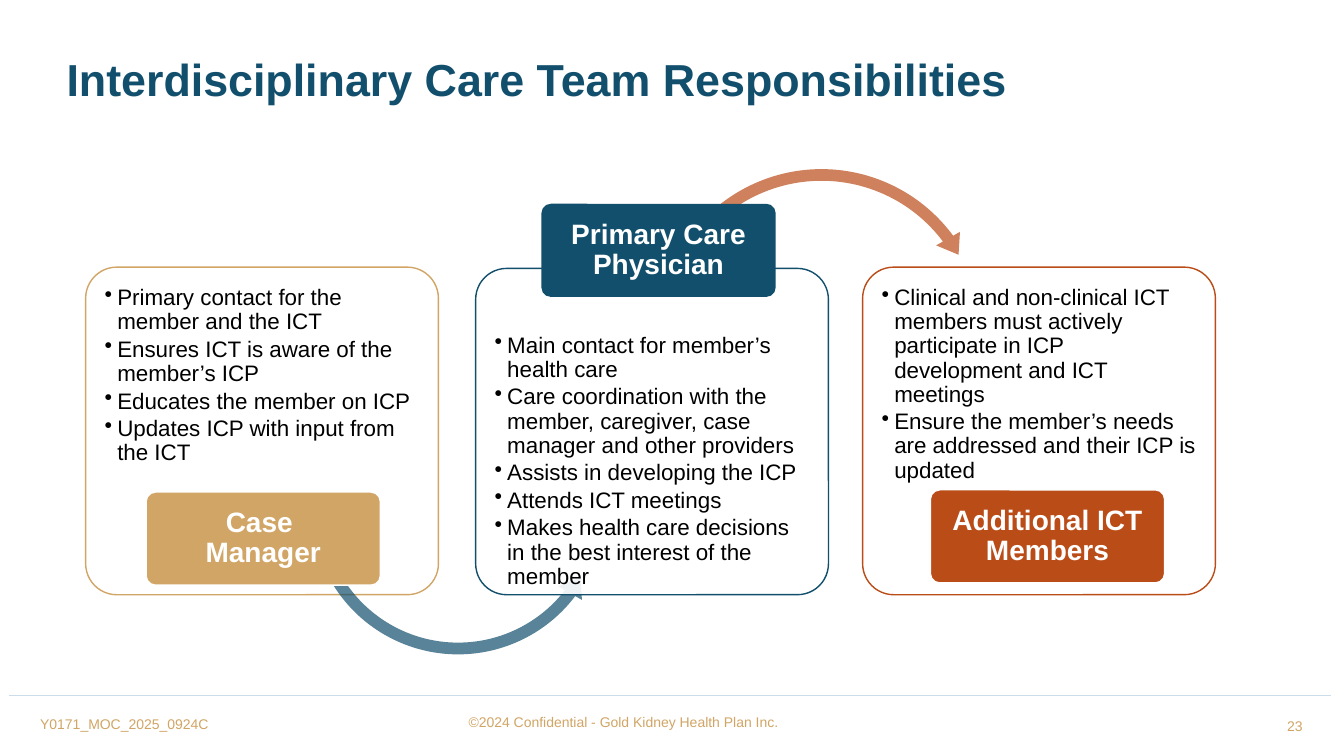
import pptx
import pptx.util
import pptx.dml.color
import pptx.enum.shapes
import pptx.enum.text
import pptx.oxml.ns
import lxml.etree

Pt = pptx.util.Pt
SHAPE = pptx.enum.shapes.MSO_SHAPE
ALIGN = pptx.enum.text.PP_ALIGN
ANCHOR = pptx.enum.text.MSO_ANCHOR
qn = pptx.oxml.ns.qn

HUES = {"gold": "D1A565", "blue": "124F6D", "rust": "BA4C17",
        "white": "FFFFFF", "black": "000000", "rule": "CCDDEA"}
TITLE = "Interdisciplinary Care Team Responsibilities"
CARD_W, CARD_END = 252, 424.8
BADGE_W, BADGE_H = 167.3, 66.5
TEAM = [
    {"hue": "gold", "card": (61.2, 190.8), "badge": (104.4, 351.5), "edge": True,
     "role": "Case \vManager", "top": 7.2,
     "tasks": ["Primary contact for the \vmember and the ICT",
               "Ensures ICT is aware of the\vmember’s ICP",
               "Educates the member on ICP",
               "Updates ICP with input from the ICT"],
     "arrow": (SHAPE.LEFT_CIRCULAR_ARROW, "blue", (216.7, 252, 221),
               (0.038, 4.7, 22.45, 90.25, 0.044))},
    {"hue": "blue", "card": (339.8, 191.7), "badge": (386.8, 145.6), "edge": False,
     "role": "Primary Care Physician", "top": 40.3,
     "tasks": ["Main contact for member’s \vhealth care",
               "Care coordination with the member, caregiver, case manager and other providers",
               "Assists in developing the ICP",
               "Attends ICT meetings",
               "Makes health care decisions in the best interest of the member"],
     "arrow": (SHAPE.CIRCULAR_ARROW, "rust", (464.4, 115.2, 244.8),
               (0.034, 4.2, 194.05, 125.75, 0.04))},
    {"hue": "rust", "card": (616.2, 190.8), "badge": (664.6, 349.9), "edge": True,
     "role": "Additional ICT Members", "top": 7.2,
     "tasks": ["Clinical and non-clinical ICT members must actively participate in ICP development and ICT meetings",
               "Ensure the member’s needs are addressed and their ICP is updated"],
     "arrow": None},
]
FOOT = [
    ("23", (755.3, 504.7, 182.2, 27.4), ALIGN.RIGHT, ANCHOR.MIDDLE, True),
    ("©2024 Confidential - Gold Kidney Health Plan Inc.",
     (327.6, 506.2, 300.2, 19.4), ALIGN.LEFT, ANCHOR.MIDDLE, True),
    ("Y0171_MOC_2025_0924C", (21.6, 507.6, 135.4, 19.4), ALIGN.LEFT, ANCHOR.TOP, False),
]


def tint(name):
    return pptx.dml.color.RGBColor.from_string(HUES[name])


def style(para, size, hue, bold=False):
    para.font.name = "Arial"
    para.font.size = Pt(size)
    para.font.bold = bold
    para.font.color.rgb = tint(hue)


def draw(slide, kind, box, fill, edge=None, alpha=None):
    shape = slide.shapes.add_shape(kind, *map(Pt, box))
    shape.shadow.inherit = False
    shape.fill.solid()
    shape.fill.fore_color.rgb = tint(fill)
    if alpha:
        clr = shape._element.spPr.find(qn("a:solidFill"))[0]
        lxml.etree.SubElement(clr, qn("a:alpha")).set("val", str(alpha * 1000))
    if edge:
        shape.line.color.rgb = tint(edge)
        shape.line.width = Pt(1)
    else:
        shape.line.fill.background()
    return shape


def inset(frame, left, top):
    frame.word_wrap = True
    frame.margin_left = frame.margin_right = Pt(left)
    frame.margin_top = Pt(top)
    frame.margin_bottom = Pt(2)


def add_card(slide, part):
    left, top = part["card"]
    card = draw(slide, SHAPE.ROUNDED_RECTANGLE, (left, top, CARD_W, CARD_END - top),
                "white", part["hue"], 90)
    card.adjustments[0] = 0.095
    frame = card.text_frame
    inset(frame, 7.2, part["top"])
    frame.vertical_anchor = ANCHOR.TOP
    for i, task in enumerate(part["tasks"]):
        para = frame.add_paragraph() if i else frame.paragraphs[0]
        para.text = task
        props = para._p.get_or_add_pPr()
        props.set("marL", str(Pt(9)))
        props.set("indent", str(Pt(-9)))
        lxml.etree.SubElement(props, qn("a:buChar")).set("char", "•")
        para.alignment = ALIGN.LEFT
        para.line_spacing = 0.9
        para.space_after = Pt(2.4)
        style(para, 16, "black")


def add_arrow(slide, kind, hue, place, bends):
    left, top, size = place
    arrow = draw(slide, kind, (left, top, size, size), hue, alpha=70)
    for i, bend in enumerate(bends):
        arrow.adjustments[i] = bend


def add_badge(slide, part):
    badge = draw(slide, SHAPE.ROUNDED_RECTANGLE, (*part["badge"], BADGE_W, BADGE_H),
                 part["hue"], "white" if part["edge"] else None)
    badge.adjustments[0] = 0.1
    frame = badge.text_frame
    inset(frame, 4, 2)
    frame.vertical_anchor = ANCHOR.MIDDLE
    para = frame.paragraphs[0]
    para.text = part["role"]
    para.alignment = ALIGN.CENTER
    para.line_spacing = 0.9
    style(para, 20, "white", True)


def add_foot(slide):
    rule = slide.shapes.add_connector(pptx.enum.shapes.MSO_CONNECTOR.STRAIGHT,
                                      Pt(6.5), Pt(496.8), Pt(951.1), Pt(496.8))
    rule.line.color.rgb = tint("rule")
    rule.line.width = Pt(0.5)
    lxml.etree.SubElement(rule._element.spPr, qn("a:effectLst"))
    for text, box, align, anchor, wrap in FOOT:
        frame = slide.shapes.add_textbox(*map(Pt, box)).text_frame
        frame.word_wrap = wrap
        frame.vertical_anchor = anchor
        para = frame.paragraphs[0]
        para.text = text
        para.alignment = align
        style(para, 10, "gold")


def add_title(slide):
    title = slide.shapes.title
    title.left, title.top, title.width, title.height = map(Pt, (40.3, 37.4, 802, 48.2))
    frame = title.text_frame
    frame.auto_size = pptx.enum.text.MSO_AUTO_SIZE.NONE
    frame.vertical_anchor = ANCHOR.TOP
    para = frame.paragraphs[0]
    para.text = TITLE
    para.alignment = ALIGN.LEFT
    para.line_spacing = 0.9
    style(para, 32, "blue", True)


def main():
    deck = pptx.Presentation()
    deck.slide_width, deck.slide_height = Pt(960), Pt(540)
    slide = deck.slides.add_slide(deck.slide_layouts[5])
    add_title(slide)
    add_foot(slide)
    for part in TEAM:
        add_card(slide, part)
        if part["arrow"]:
            add_arrow(slide, *part["arrow"])
        add_badge(slide, part)
    deck.save("out.pptx")


if __name__ == "__main__":
    main()
